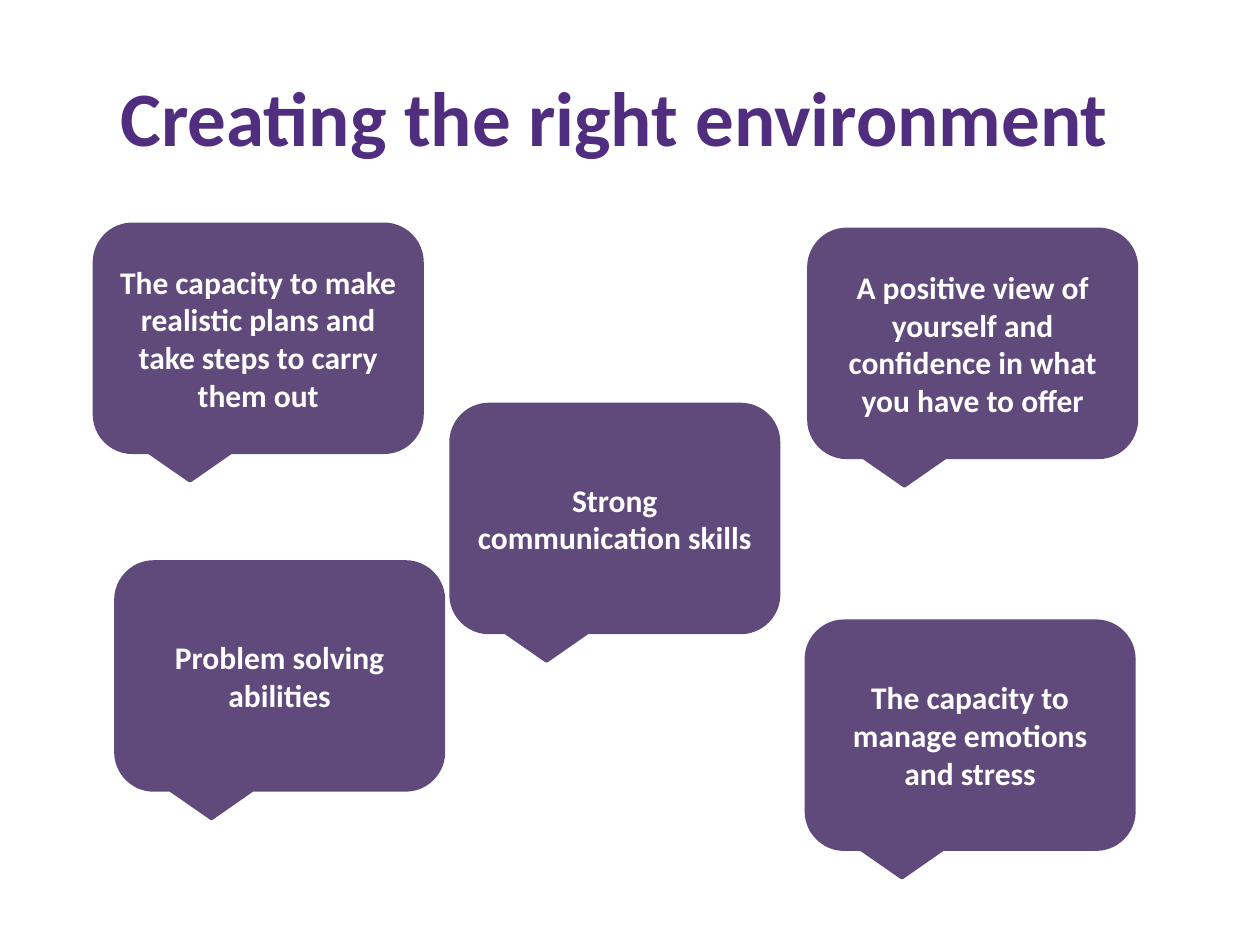
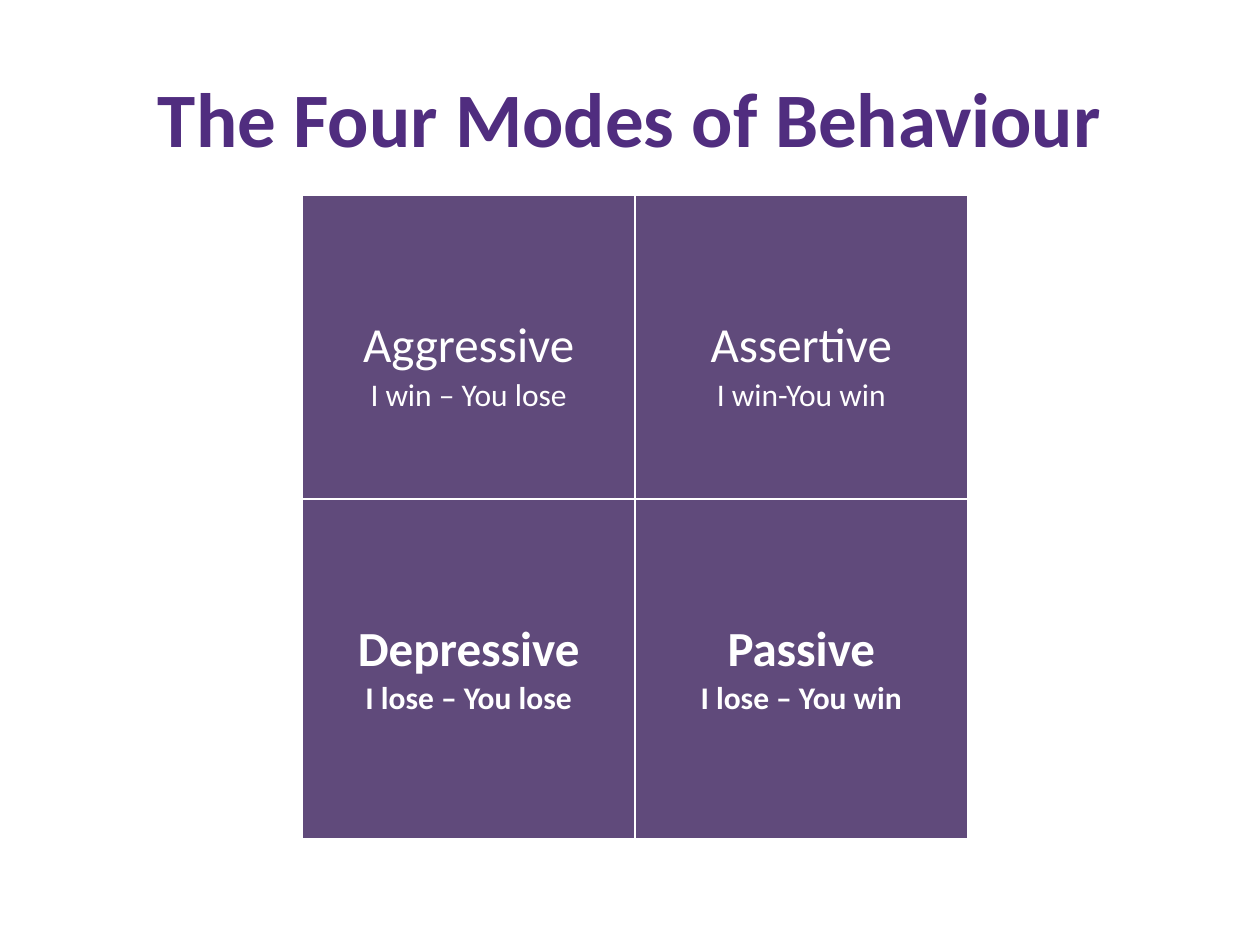
from lxml import etree
from pptx import Presentation
from pptx.dml.color import RGBColor
from pptx.enum.shapes import MSO_SHAPE
from pptx.enum.text import MSO_ANCHOR, PP_ALIGN
from pptx.oxml.ns import qn
from pptx.util import Inches, Pt

CALLOUT = MSO_SHAPE.ROUNDED_RECTANGULAR_CALLOUT
CENTER = PP_ALIGN.CENTER
MIDDLE = MSO_ANCHOR.MIDDLE
TOP = MSO_ANCHOR.TOP

# Shared style
FONT = "Calibri"
TITLE_PURPLE = "502D7F"
PANEL_PURPLE = "604A7B"
WHITE = "FFFFFF"
TITLE_ONLY = 5
CALLOUT_WIDTH, CALLOUT_HEIGHT = 2.6, 1.81

# Callouts: left, top, text
STRENGTHS = [
    (0.75, 1.78, "The capacity to make realistic plans and take steps to carry them out"),
    (3.58, 3.21, "Strong communication skills"),
    (0.92, 4.46, "Problem solving abilities"),
    (6.4, 4.93, "The capacity to manage emotions and stress"),
    (6.42, 1.82, "A positive view of yourself and confidence in what you have to offer"),
]

# Behaviour modes: name and outcome, row by row
MODES = [
    [("Aggressive", "I win – You lose"), ("Assertive", "I win-You win")],
    [("Depressive", "I lose – You lose"), ("Passive", "I lose – You win")],
]
COLUMN_WIDTH = 2.64
ROW_HEIGHTS = [2.41, 2.7]


def color(hex_code):
    return RGBColor.from_string(hex_code)


def style_paragraph(para, size, hex_code, bold):
    para.alignment = CENTER
    for span in para.runs:
        font = span.font
        font.name = FONT
        font.size = Pt(size)
        font.bold = bold
        font.color.rgb = color(hex_code)


def add_titled_page(deck, title, left, top):
    page = deck.slides.add_slide(deck.slide_layouts[TITLE_ONLY])
    box = page.shapes.title
    box.left, box.top = Inches(left), Inches(top)
    box.width, box.height = Inches(9), Inches(1.25)
    frame = box.text_frame
    frame.text = title
    frame.vertical_anchor = MIDDLE
    style_paragraph(frame.paragraphs[0], 44, TITLE_PURPLE, True)
    return page


def add_callout(page, left, top, text):
    callout = page.shapes.add_shape(
        CALLOUT, Inches(left), Inches(top), Inches(CALLOUT_WIDTH), Inches(CALLOUT_HEIGHT))
    callout.shadow.inherit = False
    callout.fill.solid()
    callout.fill.fore_color.rgb = color(PANEL_PURPLE)
    callout.line.color.rgb = color(PANEL_PURPLE)
    callout.line.width = Pt(2)
    frame = callout.text_frame
    frame.word_wrap = True
    frame.vertical_anchor = MIDDLE
    frame.text = text
    style_paragraph(frame.paragraphs[0], 18, WHITE, True)


def set_borders(cell, hex_code, width):
    properties = cell._tc.get_or_add_tcPr()
    for side in ("a:lnL", "a:lnR", "a:lnT", "a:lnB"):
        line = etree.SubElement(properties, qn(side), w=str(Pt(width)))
        fill = etree.SubElement(line, qn("a:solidFill"))
        etree.SubElement(fill, qn("a:srgbClr"), val=hex_code)


def fill_mode_cell(cell, name, outcome, bold):
    set_borders(cell, WHITE, 1)
    cell.fill.solid()
    cell.fill.fore_color.rgb = color(PANEL_PURPLE)
    cell.vertical_anchor = TOP
    cell.margin_top = Inches(0.96)
    frame = cell.text_frame
    frame.text = name
    style_paragraph(frame.paragraphs[0], 28, WHITE, bold)
    outcome_para = frame.add_paragraph()
    outcome_para.text = outcome
    style_paragraph(outcome_para, 18, WHITE, bold)


def add_mode_table(page, left, top):
    columns = len(MODES[0])
    table = page.shapes.add_table(
        len(MODES), columns, Inches(left), Inches(top),
        Inches(columns * COLUMN_WIDTH), Inches(sum(ROW_HEIGHTS))).table
    table.first_row = False
    table.horz_banding = False
    for column in table.columns:
        column.width = Inches(COLUMN_WIDTH)
    for row_index, modes in enumerate(MODES):
        table.rows[row_index].height = Inches(ROW_HEIGHTS[row_index])
        for column_index, (name, outcome) in enumerate(modes):
            # Only the lower row is bold
            fill_mode_cell(table.cell(row_index, column_index), name, outcome, row_index == 1)


def main():
    deck = Presentation()
    deck.slide_width, deck.slide_height = Inches(10), Inches(7.5)

    # Slide 1: strengths in callouts
    page = add_titled_page(deck, "Creating the right environment", 0.38, 0.29)
    for left, top, text in STRENGTHS:
        add_callout(page, left, top, text)

    # Slide 2: two-by-two table of modes
    page = add_titled_page(deck, "The Four Modes of Behaviour", 0.5, 0.3)
    add_mode_table(page, 2.4, 1.55)

    deck.save("out.pptx")


if __name__ == "__main__":
    main()
